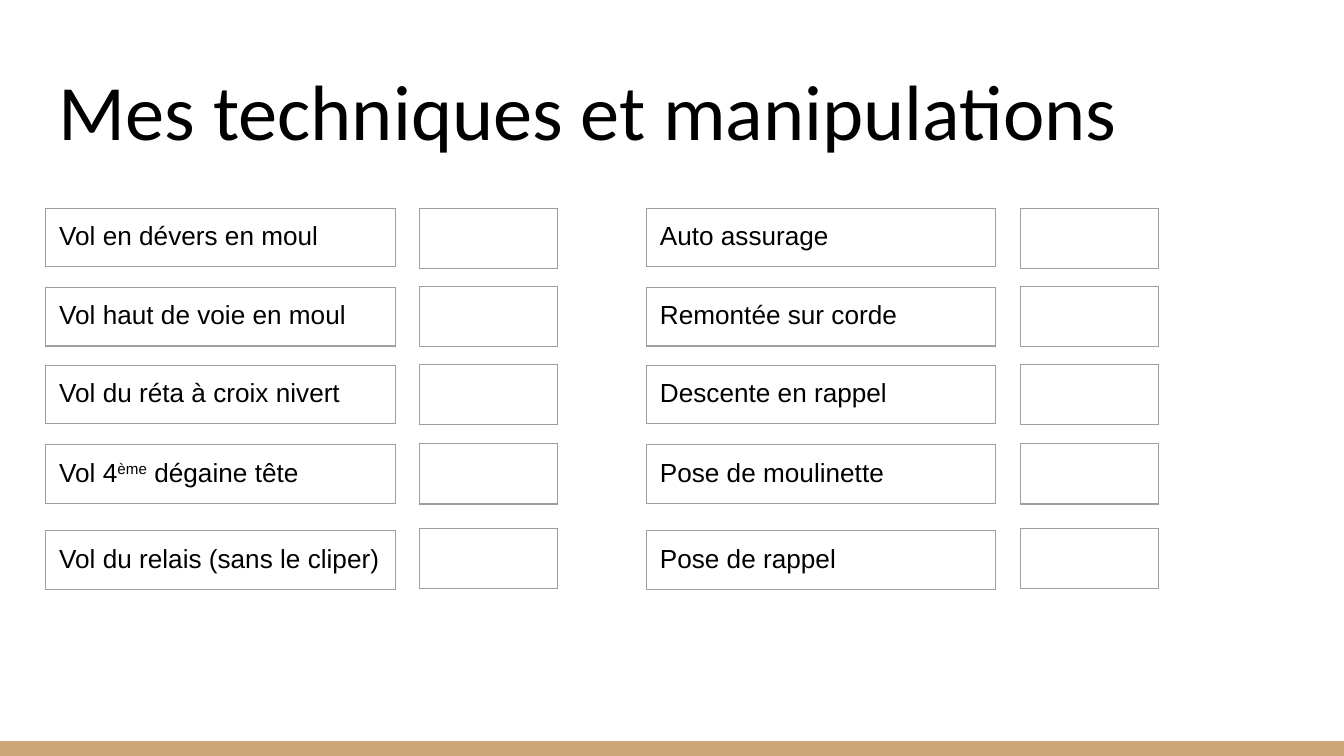
from dataclasses import dataclass

from lxml.etree import SubElement
from pptx import Presentation
from pptx.dml.color import RGBColor as RGB
from pptx.enum.shapes import MSO_SHAPE as SHAPE
from pptx.enum.text import MSO_ANCHOR as ANCHOR
from pptx.oxml.ns import qn
from pptx.util import Inches, Pt

TITLE = "Mes techniques et manipulations"
# A label is a list of (text, superscript) runs or a plain string.
SKILLS = [
    ["Vol en dévers en moul", "Vol haut de voie en moul", "Vol du réta à croix nivert",
     [("Vol 4", False), ("ème", True), (" dégaine tête", False)],
     "Vol du relais (sans le cliper)"],
    ["Auto assurage", "Remontée sur corde", "Descente en rappel",
     "Pose de moulinette", "Pose de rappel"],
]

SLIDE_W = 10
SLIDE_H = SLIDE_W * 9 / 16
BAND_H = 0.11
LEFT, GROUP_PITCH = 0.34, 4.47
LABEL_W, LABEL_H = 2.6, 0.42
BOX_OFFSET, BOX_W, BOX_H = 2.78, 1.03, 0.45
LABEL_TOPS = [1.55, 2.14, 2.72, 3.31, 3.95]
BOX_TOPS = [1.55, 2.13, 2.71, 3.3, 3.93]
INSET = Inches(0.1)


@dataclass(frozen=True)
class Theme:
    title_font: str = "Calibri"
    body_font: str = "Arial"
    title_size: int = 42
    body_size: int = 14
    ink: str = "000000"
    band: str = "CCA677"
    border: str = "9E9E9E"
    border_width: float = 0.75


THEME = Theme()


def set_font(font, name, size):
    font.name, font.size = name, Pt(size)
    font.color.rgb = RGB.from_string(THEME.ink)


def set_insets(frame):
    """Give a text frame or a table cell the same inset on all sides."""
    frame.margin_left = frame.margin_right = INSET
    frame.margin_top = frame.margin_bottom = INSET


def add_borders(cell):
    tc_pr = cell._tc.get_or_add_tcPr()
    for i, side in enumerate(("lnL", "lnR", "lnT", "lnB")):
        ln = tc_pr.makeelement(qn(f"a:{side}"), {"w": str(Pt(THEME.border_width))})
        fill = SubElement(ln, qn("a:solidFill"))
        SubElement(fill, qn("a:srgbClr"), val=THEME.border)
        tc_pr.insert(i, ln)  # borders come before the fill


def add_cell(slide, x, y, w, h, label=""):
    """Add a bordered one-cell table."""
    table = slide.shapes.add_table(1, 1, *map(Inches, (x, y, w, h))).table
    table.first_row = table.horz_banding = False
    cell = table.cell(0, 0)
    cell.fill.background()
    add_borders(cell)
    if not label:
        return
    set_insets(cell)
    p = cell.text_frame.paragraphs[0]
    set_font(p.font, THEME.body_font, THEME.body_size)
    runs = [(label, False)] if isinstance(label, str) else label
    for text, superscript in runs:
        r = p.add_run()
        r.text = text
        if superscript:
            r._r.get_or_add_rPr().set("baseline", "30000")


def add_band(slide):
    sp = slide.shapes.add_shape(SHAPE.RECTANGLE, 0, Inches(SLIDE_H - BAND_H),
                                Inches(SLIDE_W), Inches(BAND_H))
    sp.shadow.inherit = False
    sp.fill.solid()
    sp.fill.fore_color.rgb = RGB.from_string(THEME.band)
    sp.line.fill.background()


def add_title(slide):
    box = slide.shapes.add_textbox(*map(Inches, (LEFT, 0.35, SLIDE_W - 2 * LEFT, 0.91)))
    tf = box.text_frame
    tf.word_wrap = True
    tf.vertical_anchor = ANCHOR.BOTTOM
    set_insets(tf)
    p = tf.paragraphs[0]
    p.text = TITLE
    set_font(p.font, THEME.title_font, THEME.title_size)


def main():
    prs = Presentation()
    prs.slide_width, prs.slide_height = Inches(SLIDE_W), Inches(SLIDE_H)
    slide = prs.slides.add_slide(prs.slide_layouts[6])
    add_band(slide)
    add_title(slide)
    for i, labels in enumerate(SKILLS):
        x = LEFT + i * GROUP_PITCH
        for label, y in zip(labels, LABEL_TOPS):
            add_cell(slide, x, y, LABEL_W, LABEL_H, label)
        for y in BOX_TOPS:
            add_cell(slide, x + BOX_OFFSET, y, BOX_W, BOX_H)
    prs.save("out.pptx")


if __name__ == "__main__":
    main()
